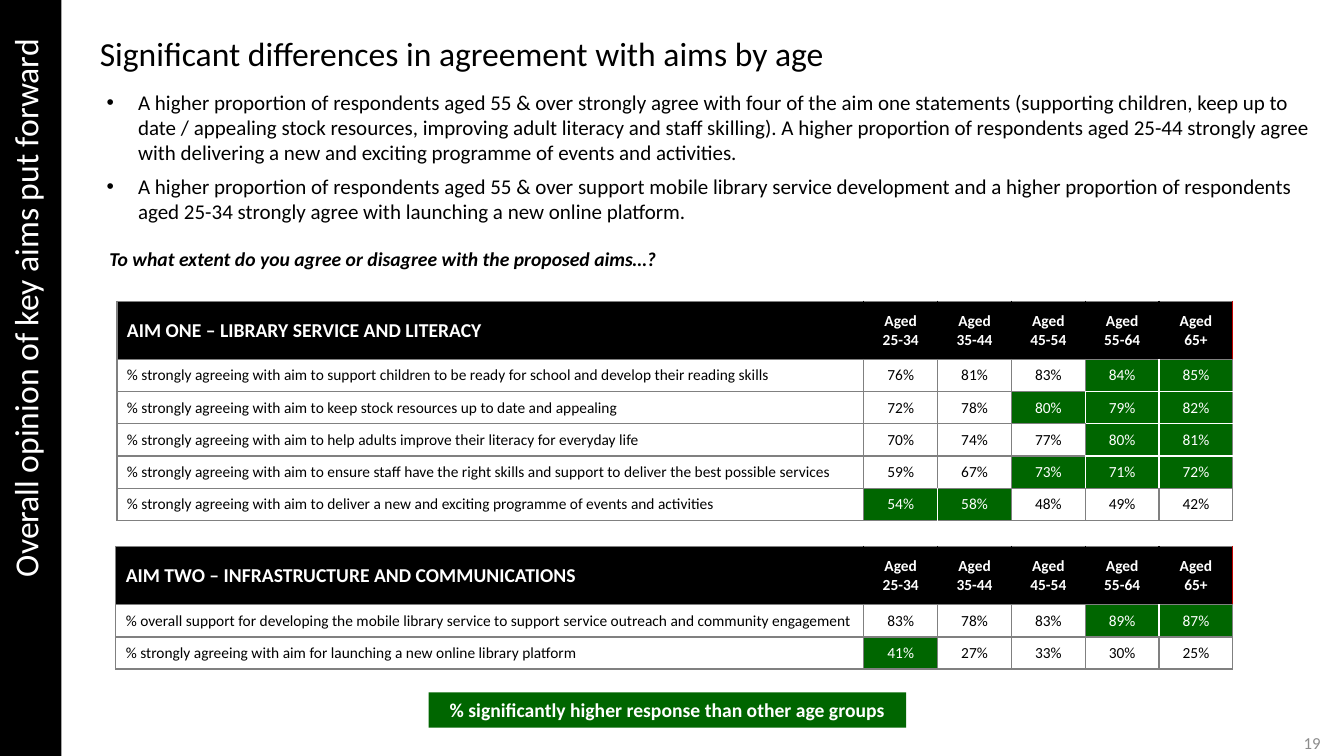
from dataclasses import dataclass

from lxml.etree import SubElement
from pptx import Presentation
from pptx.dml.color import RGBColor as RGB
from pptx.enum.shapes import MSO_SHAPE as Preset
from pptx.enum.text import MSO_ANCHOR as Anchor, MSO_AUTO_SIZE as AutoSize, PP_ALIGN as Align
from pptx.oxml import parse_xml
from pptx.oxml.ns import nsdecls, qn
from pptx.util import Cm, Pt


@dataclass(frozen=True)
class Theme:
    font: str = "Calibri"
    black: str = "000000"
    white: str = "FFFFFF"
    green: str = "006600"
    red: str = "C00000"
    grid: str = "808080"
    number_grey: str = "8C8C8C"
    title: int = 24
    bullet: int = 15
    heading: int = 14
    number: int = 12
    cell: int = 11


THEME = Theme()

BULLETS = (
    "A higher proportion of respondents aged 55 & over strongly agree with four of the aim one "
    "statements (supporting children, keep up to date / appealing stock resources, improving adult "
    "literacy and staff skilling). A higher proportion of respondents aged 25-44 strongly agree "
    "with delivering a new and exciting programme of events and activities.",
    "A higher proportion of respondents aged 55 & over support mobile library service development "
    "and a higher proportion of respondents aged 25-34 strongly agree with launching a new online "
    "platform.",
)
AGES = ("25-34", "35-44", "45-54", "55-64", "65+")

# Statement, percentage per age group, indexes of the significantly higher groups
AIM_ONE = (
    ("% strongly agreeing with aim to support children to be ready for school and develop their "
     "reading skills", (76, 81, 83, 84, 85), {3, 4}),
    ("% strongly agreeing with aim to keep stock resources up to date and appealing",
     (72, 78, 80, 79, 82), {2, 3, 4}),
    ("% strongly agreeing with aim to help adults improve their literacy for everyday life",
     (70, 74, 77, 80, 81), {3, 4}),
    ("% strongly agreeing with aim to ensure staff have the right skills and support to deliver "
     "the best possible services", (59, 67, 73, 71, 72), {2, 3, 4}),
    ("% strongly agreeing with aim to deliver a new and exciting programme of events and "
     "activities", (54, 58, 48, 49, 42), {0, 1}),
)
AIM_TWO = (
    ("% overall support for developing the mobile library service to support service outreach "
     "and community engagement", (83, 78, 83, 89, 87), {3, 4}),
    ("% strongly agreeing with aim for launching a new online library platform",
     (41, 27, 33, 30, 25), {0}),
)


def box(left, top, width, height):
    return Cm(left), Cm(top), Cm(width), Cm(height)


def write(frame, text, size, color, align=Align.LEFT, bold=False, italic=False):
    frame.text = text
    frame.word_wrap = True
    for paragraph in frame.paragraphs:
        paragraph.alignment = align
        for run in paragraph.runs:
            run.font.name = THEME.font
            run.font.size = Pt(size)
            run.font.bold = bold
            run.font.italic = italic
            run.font.color.rgb = RGB.from_string(color)


def add_text(slide, area, text, size, color, **style):
    frame = slide.shapes.add_textbox(*area).text_frame
    write(frame, text, size, color, **style)
    return frame


def add_panel(slide, area, fill, text, size, **style):
    panel = slide.shapes.add_shape(Preset.RECTANGLE, *area)
    panel.shadow.inherit = False
    panel.fill.solid()
    panel.fill.fore_color.rgb = RGB.from_string(fill)
    panel.line.fill.background()
    write(panel.text_frame, text, size, THEME.white, **style)
    return panel.text_frame


def add_bullets(slide, area, points):
    frame = add_text(slide, area, "\n".join(points), THEME.bullet, THEME.black)
    for paragraph in frame.paragraphs:
        paragraph.space_before = Pt(6)
        properties = paragraph._p.get_or_add_pPr()
        properties.set("marL", str(Cm(0.79)))
        properties.set("indent", str(-Cm(0.79)))
        SubElement(properties, qn("a:buFont")).set("typeface", "Arial")
        SubElement(properties, qn("a:buChar")).set("char", "•")


def edge_color(kind, neighbour):
    """Colour of the border shared by two cells of the given kinds."""
    if kind == neighbour == "header":
        return THEME.black
    if kind == neighbour == "higher":
        return THEME.white
    return THEME.grid


def set_borders(cell, colors):
    properties = cell._tc.get_or_add_tcPr()
    for position, (side, color) in enumerate(colors.items()):
        properties.insert(position, parse_xml(
            f'<a:ln{side} {nsdecls("a")} w="{Pt(1)}"><a:solidFill><a:srgbClr val="{color}"/>'
            f'</a:solidFill></a:ln{side}>'))


def fill_cell(cell, text, kind, first_column):
    cell.vertical_anchor = Anchor.MIDDLE
    cell.margin_left = cell.margin_right = Cm(0.25)
    cell.margin_top = cell.margin_bottom = Cm(0.05)
    fill = {"header": THEME.black, "higher": THEME.green}.get(kind)
    if fill:
        cell.fill.solid()
        cell.fill.fore_color.rgb = RGB.from_string(fill)
    else:
        cell.fill.background()
    header = kind == "header"
    write(cell.text_frame, text, THEME.heading if header and first_column else THEME.cell,
          THEME.white if fill else THEME.black,
          align=Align.LEFT if first_column else Align.CENTER, bold=header)


def add_aim_table(slide, left, top, label_width, heading, statements):
    texts = [[heading, *(f"Aged {age}" for age in AGES)]]
    kinds = [["header"] * len(texts[0])]
    for label, values, higher in statements:
        texts.append([label, *(f"{value}%" for value in values)])
        kinds.append(["plain", *("higher" if i in higher else "plain" for i in range(len(AGES)))])

    widths = [label_width] + [1.86] * len(AGES)
    heights = [1.47] + [0.81] * len(statements)
    table = slide.shapes.add_table(
        len(heights), len(widths), *box(left, top, sum(widths), sum(heights))).table
    table.first_row = table.horz_banding = False
    for column, width in zip(table.columns, widths):
        column.width = Cm(width)
    for row, height in zip(table.rows, heights):
        row.height = Cm(height)

    def kind_at(r, c):
        inside = 0 <= r < len(heights) and 0 <= c < len(widths)
        return kinds[r][c] if inside else None

    for r, row_texts in enumerate(texts):
        for c, text in enumerate(row_texts):
            kind = kinds[r][c]
            fill_cell(table.cell(r, c), text, kind, c == 0)
            around = {"L": (r, c - 1), "R": (r, c + 1), "T": (r - 1, c), "B": (r + 1, c)}
            colors = {side: edge_color(kind, kind_at(*spot)) for side, spot in around.items()}
            if kind == "header" and c == len(AGES):
                colors["R"] = THEME.red
            set_borders(table.cell(r, c), colors)


def main():
    deck = Presentation()
    deck.slide_width, deck.slide_height = Cm(33.87), Cm(19.05)
    slide = deck.slides.add_slide(deck.slide_layouts[5])

    # Section name along the left edge
    section = add_panel(slide, box(0, 0, 1.55, 19.05), THEME.black,
                        "Overall opinion of key aims put forward", THEME.title, align=Align.RIGHT)
    section.vertical_anchor = Anchor.MIDDLE
    section.margin_left, section.margin_top = Cm(0.25), Cm(0.99)
    section.margin_right, section.margin_bottom = Cm(0.41), Cm(0)
    section.paragraphs[0].line_spacing = 0.9
    section._txBody.bodyPr.set("vert", "vert270")

    # Title, findings and survey question
    title = slide.shapes.title
    title.left, title.top, title.width, title.height = box(2.26, 0.71, 27.43, 1.27)
    write(title.text_frame, "Significant differences in agreement with aims by age",
          THEME.title, THEME.black)
    title.text_frame.vertical_anchor = Anchor.TOP
    title.text_frame.auto_size = AutoSize.SHAPE_TO_FIT_TEXT
    add_bullets(slide, box(2.44, 2.13, 31.09, 3.68), BULLETS)
    add_text(slide, box(2.51, 6.1, 28.91, 0.86),
             "To what extent do you agree or disagree with the proposed aims…?",
             THEME.heading, THEME.black, bold=True, italic=True)

    # Results by age group
    add_aim_table(slide, 2.95, 7.59, 18.82, "AIM ONE – LIBRARY SERVICE AND LITERACY", AIM_ONE)
    add_aim_table(slide, 2.92, 13.77, 18.85, "AIM TWO – INFRASTRUCTURE AND COMMUNICATIONS", AIM_TWO)

    # Key to the green cells, and slide number
    add_panel(slide, box(10.8, 17.45, 12.04, 0.89), THEME.green,
              "% significantly higher response than other age groups", THEME.heading,
              align=Align.CENTER, bold=True)
    number = add_text(slide, box(32.59, 18.39, 0.94, 0.66), "19", THEME.number,
                      THEME.number_grey, align=Align.RIGHT)
    number.margin_left = Cm(0)
    number.vertical_anchor = Anchor.MIDDLE

    deck.save("out.pptx")


if __name__ == "__main__":
    main()
